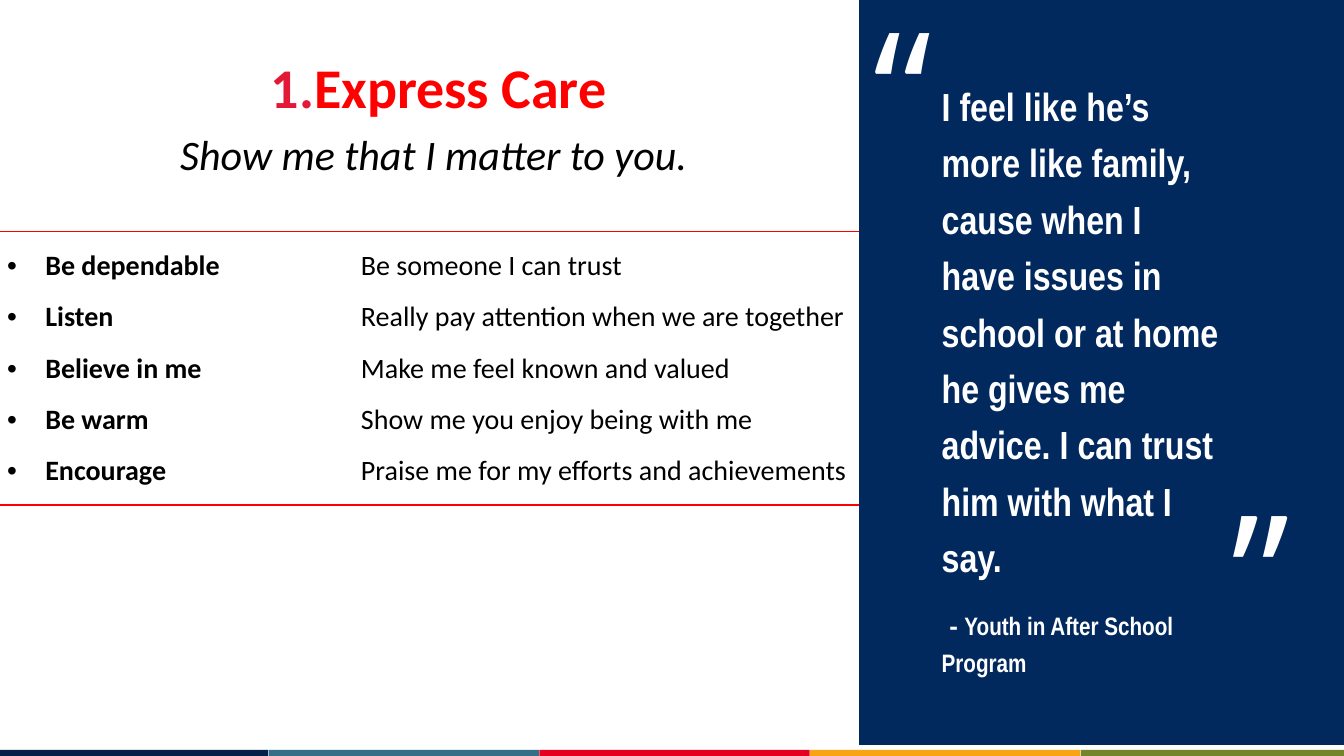
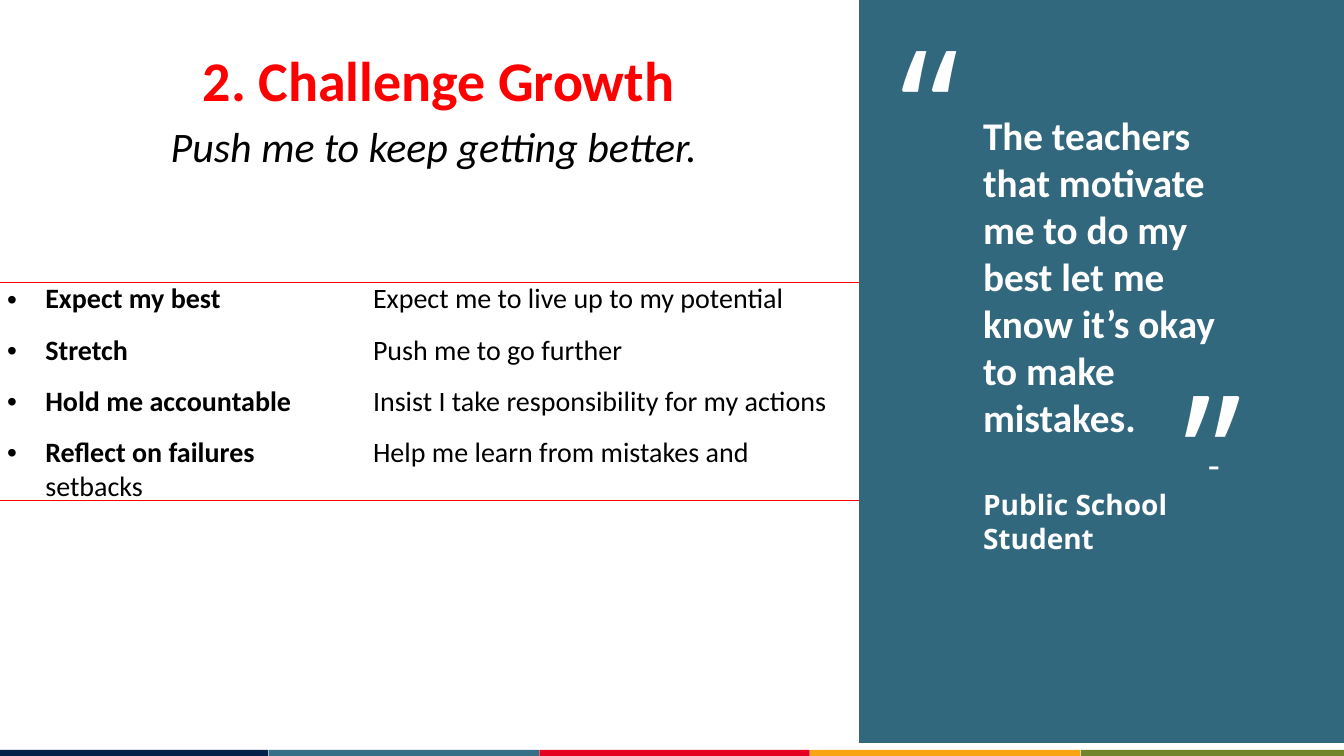
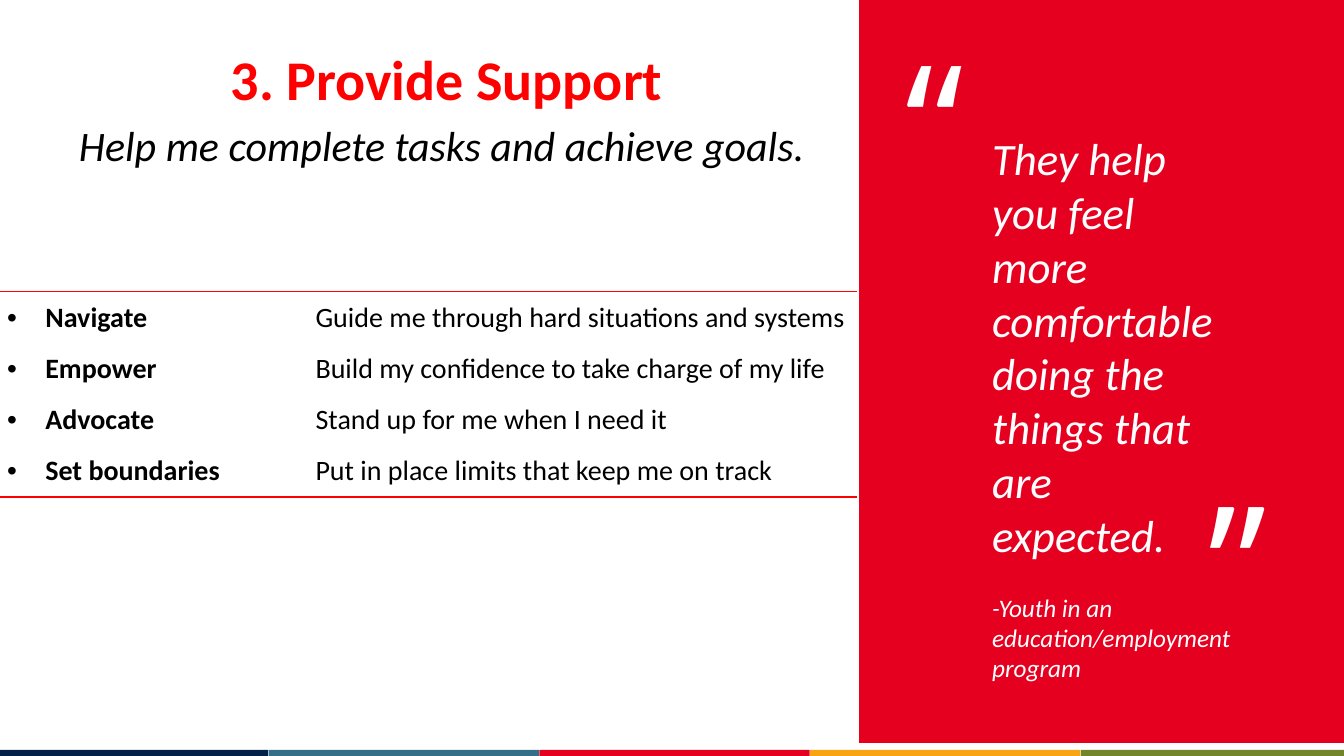
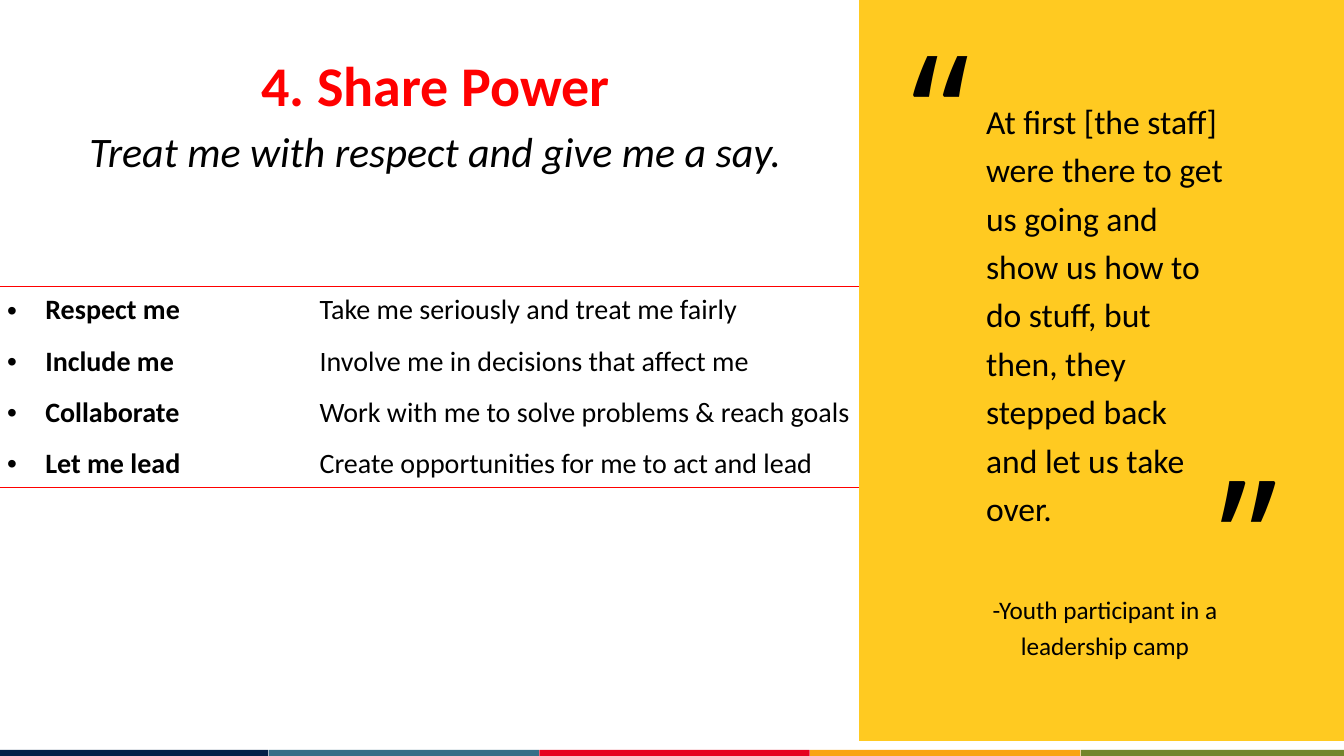
import pptx
import pptx.dml.color
import pptx.enum.shapes
import pptx.enum.text
import pptx.oxml
import pptx.oxml.ns
import pptx.util

Inches = pptx.util.Inches
Pt = pptx.util.Pt
Align = pptx.enum.text.PP_ALIGN
Anchor = pptx.enum.text.MSO_ANCHOR

COLOURS = {
    "white": "FFFFFF", "black": "000000", "title": "FF0000", "number": "E31837",
    "navy": "02295E", "teal": "32687E", "red": "E6001F", "yellow": "FFCA21",
    "band navy": "022048", "band teal": "356E87", "band orange": "F9A413",
    "band green": "72852B",
}
BANDS = ["band navy", "band teal", "red", "band orange", "band green"]
PANEL_LEFT, PANEL_WIDTH = 8.52, 4.81


def colour(name):
    return pptx.dml.color.RGBColor.from_string(COLOURS[name])


def dress(target, values):
    for name, value in values.items():
        setattr(target, name, value)


def element(xml):
    """Parse an XML fragment whose root is in the drawing namespace."""
    head, rest = xml.split(" ", 1)
    return pptx.oxml.parse_xml(f"{head} {pptx.oxml.ns.nsdecls('a')} {rest}")


class Deck:
    def __init__(self):
        self.file = pptx.Presentation()
        self.file.slide_width, self.file.slide_height = Inches(13.33), Inches(7.5)
        self.page = None

    def new_page(self):
        self.page = self.file.slides.add_slide(self.file.slide_layouts[5])

    def rectangle(self, shapes, place, fill):
        box = shapes.add_shape(pptx.enum.shapes.MSO_SHAPE.RECTANGLE, *map(Inches, place))
        box.shadow.inherit = False
        box.fill.solid()
        box.fill.fore_color.rgb = colour(fill)
        box.line.fill.background()

    def footer_bands(self):
        """Draw the bands and move them to the slide master."""
        group = self.page.shapes.add_group_shape()
        for index, fill in enumerate(BANDS):
            self.rectangle(group.shapes, (-0.02 + 2.685 * index, 7.44, 2.68, 0.1), fill)
        self.file.slide_master.element.cSld.spTree.append(group.element)

    def paragraph(self, frame, spans, first=False, bullet=None, tab=None,
                  indent=None, **spacing):
        """Add a paragraph; spans are (text, font values) pairs."""
        para = frame.paragraphs[0] if first else frame.add_paragraph()
        dress(para, spacing)
        properties = para._p.get_or_add_pPr()
        if indent:
            for name, value in zip(("marL", "indent"), indent):
                properties.set(name, str(Inches(value)))
        for xml in bullet or ["<a:buNone />"]:
            properties.append(element(xml))
        if tab:
            properties.append(element(
                f'<a:tabLst ><a:tab pos="{Inches(tab)}" algn="l"/></a:tabLst>'))
        for text, values in spans:
            span = para.add_run()
            span.text = text
            values = dict(values)
            span.font.color.rgb = colour(values.pop("colour"))
            dress(span.font, values)

    def title(self, place, heading, subtitle, number=None):
        box = self.page.shapes.title
        dress(box, dict(zip(("left", "top", "width", "height"), map(Inches, place))))
        frame = box.text_frame
        dress(frame, {"word_wrap": True, "vertical_anchor": Anchor.TOP,
                      "auto_size": pptx.enum.text.MSO_AUTO_SIZE.SHAPE_TO_FIT_TEXT})
        numbering = {}
        if number:
            numbering = {"indent": (0.38, -0.38), "bullet": [
                f'<a:buClr ><a:srgbClr val="{COLOURS["number"]}"/></a:buClr>',
                f'<a:buFont typeface="+mj-lt"/>',
                f'<a:buAutoNum type="arabicPeriod" startAt="{number}"/>']}
        self.paragraph(frame, [(heading, {"size": Pt(40), "name": "Calibri", "bold": True,
                                          "colour": "title"})],
                       first=True, alignment=Align.CENTER, space_after=Pt(6), **numbering)
        self.paragraph(frame, [(subtitle, {"size": Pt(30), "name": "Calibri", "bold": False,
                                           "italic": True, "colour": "black"})],
                       alignment=Align.CENTER)

    def text_box(self, place, paragraphs):
        box = self.page.shapes.add_textbox(*map(Inches, place))
        frame = box.text_frame
        dress(frame, {"word_wrap": True, "margin_left": Inches(0.05),
                      "margin_right": Inches(0.05), "margin_top": Inches(0.02),
                      "margin_bottom": Inches(0.02),
                      "auto_size": pptx.enum.text.MSO_AUTO_SIZE.SHAPE_TO_FIT_TEXT})
        for index, (spans, layout) in enumerate(paragraphs):
            self.paragraph(frame, spans, first=index == 0, **layout)

    def quote(self, panel, ink, marks, place, paragraphs):
        fill, height = panel
        self.rectangle(self.page.shapes, (PANEL_LEFT, 0, PANEL_WIDTH, height), fill)
        for mark, corner in zip("“”", marks):
            font = {"size": Pt(119), "name": "Open Sans", "colour": ink}
            self.text_box((*corner, 0.58, 1.65), [([(mark, font)], {"line_spacing": 0.8})])
        inked = [([(text, {**font, "colour": ink}) for text, font in spans], layout)
                 for spans, layout in paragraphs]
        self.text_box(place, inked)

    def actions(self, place, tab, rows):
        """Ruled one-cell table of bulleted actions and their meanings."""
        table = self.page.shapes.add_table(1, 1, *map(Inches, place)).table
        dress(table, {"first_row": False, "horz_banding": False})
        cell = table.cell(0, 0)
        dress(cell, {"margin_left": Inches(0.07), "margin_right": Inches(0.07),
                     "margin_top": 0, "margin_bottom": 0,
                     "vertical_anchor": Anchor.MIDDLE})
        cell.fill.solid()
        cell.fill.fore_color.rgb = colour("white")
        rule = f'<a:solidFill><a:srgbClr val="{COLOURS["title"]}"/></a:solidFill>'
        sides = {"L": "<a:noFill/>", "R": "<a:noFill/>", "T": rule, "B": rule}
        for index, (side, paint) in enumerate(sides.items()):
            cell._tc.get_or_add_tcPr().insert(index, element(
                f'<a:ln{side} w="{Pt(1)}">{paint}</a:ln{side}>'))
        font = {"size": Pt(20), "name": "Calibri", "colour": "black"}
        for index, (action, meaning) in enumerate(rows):
            before = {"space_before": Pt(6)} if index else {}
            self.paragraph(cell.text_frame,
                           [(action + "\t", {**font, "bold": True}),
                            (meaning, {**font, "bold": False})],
                           first=index == 0, indent=(0.38, -0.38), tab=tab,
                           bullet=['<a:buFont typeface="Arial"/>', '<a:buChar char="•"/>'],
                           space_after=Pt(6), **before)


NARROW = {"size": Pt(28), "name": "Arial Narrow", "bold": True}
STRONG = {"size": Pt(28), "name": "Calibri", "bold": True}
SLANTED = {"size": Pt(32), "name": "Calibri", "italic": True}
PLAIN = {"size": Pt(24), "name": "Calibri"}
SLANT_INDENT = {"indent": (0.22, 0)}

PAGES = [
    {
        "title": ((0.09, 0.47, 8.52, 1.36), "Express Care", "Show me that I matter to you. ", 1),
        "quote": (("navy", 7.39), "white", [(8.61, 0.22), (12.16, 5.02)],
                  (9.29, 0.7, 2.87, 6.16), [
            ([("I feel like he’s more like family, cause when I have issues in school or at "
               "home he gives me advice. I can trust him with what I say.", NARROW)],
             {"line_spacing": 1.2}),
            ([("- ", {**NARROW, "size": Pt(18), "name": "Open Sans"}),
              ("Youth in After School Program", {**NARROW, "size": Pt(18)})],
             {"line_spacing": 1.2, "space_before": Pt(17), "indent": (0, 0.08)}),
        ]),
        "actions": ((0, 2.3, 8.52, 2.71), 3.51, [
            ("Be dependable", "Be someone I can trust"),
            ("Listen", "Really pay attention when we are together"),
            ("Believe in me", "Make me feel known and valued"),
            ("Be warm", "Show me you enjoy being with me"),
            ("Encourage", "Praise me for my efforts and achievements"),
        ]),
    },
    {
        "title": ((0, 0.4, 8.7, 1.36), "2. Challenge Growth", "Push me to keep getting better. "),
        "quote": (("teal", 7.37), "white", [(8.88, 0.4), (11.69, 3.82)],
                  (9.7, 1.08, 2.46, 4.76), [
            ([("The teachers that motivate me to do my best let me know it’s okay to make "
               "mistakes.", STRONG)], {}),
            ([("\t- ", {**STRONG, "bold": False}),
              ("Public School Student", {**STRONG, "size": Pt(20), "name": "Open Sans"})],
             {"tab": 2.23}),
        ]),
        "actions": ((0, 2.8, 8.52, 2.04), 3.63, [
            ("Expect my best", "Expect me to live up to my potential"),
            ("Stretch", "Push me to go further"),
            ("Hold me accountable", "Insist I take responsibility for my actions"),
            ("Reflect on failures", "Help me learn from mistakes and setbacks"),
        ]),
    },
    {
        "title": ((0.18, 0.39, 8.5, 1.36), "3. Provide Support",
                  "Help me complete tasks and achieve goals. "),
        "quote": (("red", 7.37), "white", [(8.93, 0.55), (11.94, 4.93)],
                  (9.57, 1.28, 2.7, 5.57), [
            ([("They help you feel more", SLANTED)], SLANT_INDENT),
            ([("comfortable doing the things that", SLANTED)], SLANT_INDENT),
            ([("are expected.", SLANTED)], SLANT_INDENT),
            ([("-Youth in an education/employment program", {**SLANTED, "size": Pt(18)})],
             {**SLANT_INDENT, "space_before": Pt(22)}),
        ]),
        "actions": ((0, 2.89, 8.5, 2.04), 3.06, [
            ("Navigate", "Guide me through hard situations and systems"),
            ("Empower", "Build my confidence to take charge of my life"),
            ("Advocate", "Stand up for me when I need it"),
            ("Set boundaries", "Put in place limits that keep me on track"),
        ]),
    },
    {
        "title": ((0.06, 0.45, 8.52, 1.36), "4. Share Power",
                  "Treat me with respect and give me a say."),
        "quote": (("yellow", 7.35), "black", [(8.99, 0.45), (12.05, 4.67)],
                  (9.73, 0.9, 2.46, 5.77), [
            ([("At first [the staff] were there to get us going and show us how to do stuff, "
               "but then, they stepped back and let us take over.", PLAIN)],
             {"line_spacing": 1.2}),
            ([("-Youth participant in a leadership camp", {**PLAIN, "size": Pt(18)})],
             {"line_spacing": 1.2, "space_before": Pt(43), "alignment": Align.CENTER}),
        ]),
        "actions": ((0, 2.84, 8.52, 2), 3.1, [
            ("Respect me", "Take me seriously and treat me fairly"),
            ("Include me", "Involve me in decisions that affect me"),
            ("Collaborate", "Work with me to solve problems & reach goals"),
            ("Let me lead", "Create opportunities for me to act and lead"),
        ]),
    },
]


def main():
    deck = Deck()
    for index, content in enumerate(PAGES):
        deck.new_page()
        if index == 0:
            deck.footer_bands()
        deck.quote(*content["quote"])
        deck.title(*content["title"])
        deck.actions(*content["actions"])
    deck.file.save("out.pptx")


if __name__ == "__main__":
    main()
